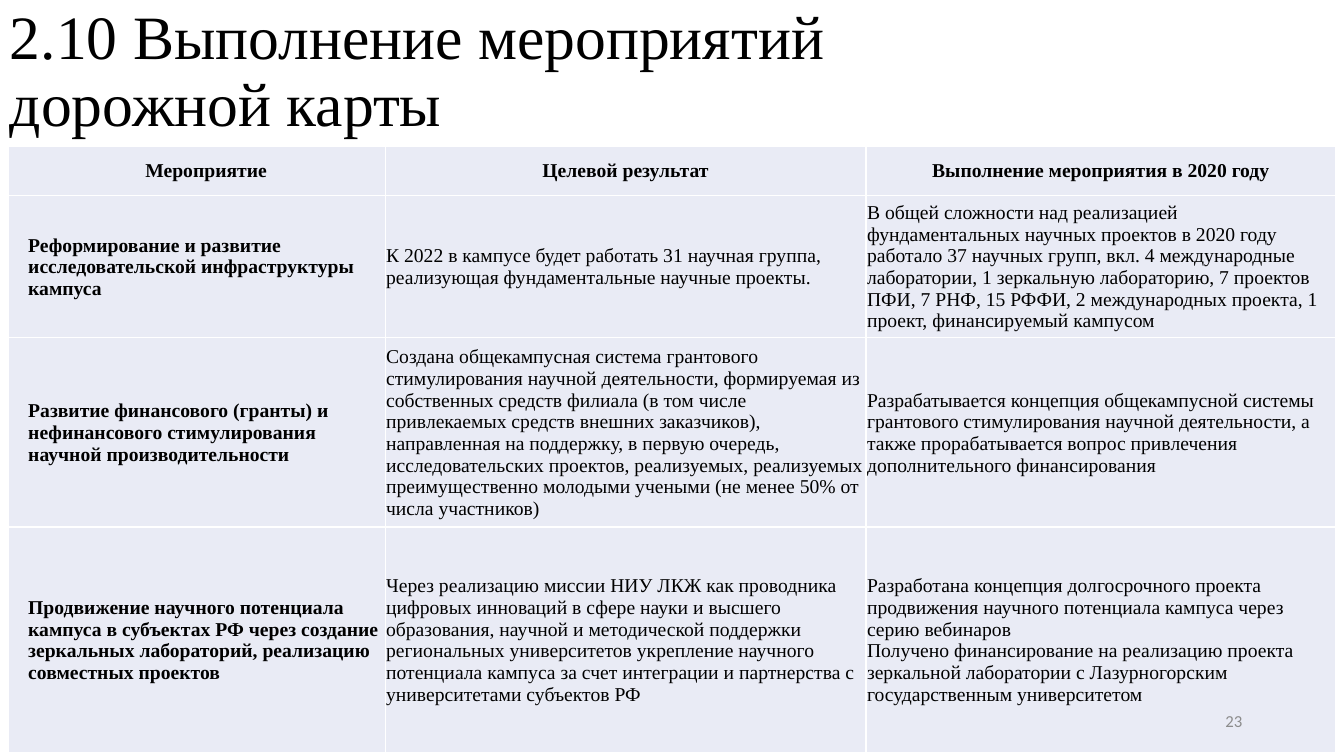
from lxml.etree import SubElement
from pptx import Presentation
from pptx.dml.color import RGBColor
from pptx.enum.text import MSO_ANCHOR, PP_ALIGN
from pptx.oxml.ns import qn
from pptx.util import Inches, Pt

TITLE = "2.10 Выполнение мероприятий дорожной карты"
PAGE_NUMBER = "23"
ROWS = [
    (
        "Мероприятие",
        "Целевой результат",
        "Выполнение мероприятия в 2020 году",
    ),
    (
        "Реформирование и развитие исследовательской инфраструктуры кампуса",
        "К 2022 в кампусе будет работать 31 научная группа, реализующая "
        "фундаментальные научные проекты.",
        "В общей сложности над реализацией фундаментальных научных проектов в 2020 году "
        "работало 37 научных групп, вкл. 4 международные лаборатории, 1 зеркальную "
        "лабораторию, 7 проектов ПФИ, 7 РНФ, 15 РФФИ, 2 международных проекта, 1 проект, "
        "финансируемый кампусом",
    ),
    (
        "Развитие финансового (гранты) и нефинансового стимулирования научной "
        "производительности",
        "Создана общекампусная система грантового стимулирования научной деятельности, "
        "формируемая из собственных средств филиала (в том числе привлекаемых средств "
        "внешних заказчиков), направленная на поддержку, в первую очередь, "
        "исследовательских проектов, реализуемых, реализуемых преимущественно молодыми "
        "учеными (не менее 50% от числа участников)",
        "Разрабатывается концепция общекампусной системы грантового стимулирования "
        "научной деятельности, а также прорабатывается вопрос привлечения "
        "дополнительного финансирования",
    ),
    (
        "Продвижение научного потенциала кампуса в субъектах РФ через создание "
        "зеркальных лабораторий, реализацию совместных проектов",
        "Через реализацию миссии НИУ ЛКЖ как проводника цифровых инноваций в сфере науки "
        "и высшего образования, научной и методической поддержки региональных "
        "университетов укрепление научного потенциала кампуса за счет интеграции и "
        "партнерства с университетами субъектов РФ",
        "Разработана концепция долгосрочного проекта продвижения научного потенциала "
        "кампуса через серию вебинаров\n"
        "Получено финансирование на реализацию проекта зеркальной лаборатории с "
        "Лазурногорским государственным университетом",
    ),
]
COLUMN_WIDTHS = [3.74, 4.77, 4.66]
ROW_HEIGHTS = [0.49, 1.37, 1.83, 2.24]

BLACK = RGBColor(0x00, 0x00, 0x00)
WHITE = RGBColor(0xFF, 0xFF, 0xFF)
GRAY = RGBColor(0x8C, 0x8C, 0x8C)
CELL_FILL = RGBColor(0xE9, 0xEB, 0xF5)
SERIF = "Times New Roman"


def style_text(text_frame, font_name, size, color, alignment, bold=False):
    for paragraph in text_frame.paragraphs:
        paragraph.alignment = alignment
        paragraph.font.name = font_name
        paragraph.font.size = Pt(size)
        paragraph.font.color.rgb = color
        paragraph.font.bold = bold


def add_text(slide, box, text, font_name, size, color, alignment):
    shape = slide.shapes.add_textbox(*map(Inches, box))
    text_frame = shape.text_frame
    text_frame.word_wrap = True
    text_frame.vertical_anchor = MSO_ANCHOR.MIDDLE
    text_frame.text = text
    style_text(text_frame, font_name, size, color, alignment)
    return text_frame


def add_borders(cell):
    properties = cell._tc.get_or_add_tcPr()
    for position, side in enumerate(("a:lnL", "a:lnR", "a:lnT", "a:lnB")):
        line = SubElement(properties, qn(side), w=str(Pt(1)))
        fill = SubElement(line, qn("a:solidFill"))
        SubElement(fill, qn("a:srgbClr"), val=str(WHITE))
        properties.insert(position, line)


def fill_cell(cell, text, is_header, is_first_column):
    cell.text = text
    cell.vertical_anchor = MSO_ANCHOR.MIDDLE
    cell.margin_left = Inches(0.2 if is_first_column else 0.01)
    cell.margin_right = cell.margin_top = Inches(0.01)
    cell.margin_bottom = 0
    cell.fill.solid()
    cell.fill.fore_color.rgb = CELL_FILL
    alignment = PP_ALIGN.CENTER if is_header else PP_ALIGN.LEFT
    style_text(cell.text_frame, SERIF, 14, BLACK, alignment, is_header or is_first_column)
    add_borders(cell)


def add_roadmap_table(slide):
    table = slide.shapes.add_table(
        len(ROWS), len(COLUMN_WIDTHS), Inches(0.08), Inches(1.45),
        Inches(sum(COLUMN_WIDTHS)), Inches(sum(ROW_HEIGHTS)),
    ).table
    for column, width in zip(table.columns, COLUMN_WIDTHS):
        column.width = Inches(width)
    for row, height in zip(table.rows, ROW_HEIGHTS):
        row.height = Inches(height)
    for row_index, texts in enumerate(ROWS):
        for column_index, text in enumerate(texts):
            fill_cell(table.cell(row_index, column_index), text,
                      row_index == 0, column_index == 0)


def main():
    presentation = Presentation()
    presentation.slide_width = Inches(13.33)
    presentation.slide_height = Inches(7.5)
    slide = presentation.slides.add_slide(presentation.slide_layouts[6])
    title = add_text(slide, (0, 0, 10.7, 1.45), TITLE, SERIF, 44, BLACK, PP_ALIGN.LEFT)
    title.paragraphs[0].line_spacing = 0.9
    add_roadmap_table(slide)
    add_text(slide, (9.42, 6.95, 3, 0.4), PAGE_NUMBER, "Calibri", 12, GRAY, PP_ALIGN.RIGHT)
    presentation.save("out.pptx")


if __name__ == "__main__":
    main()
